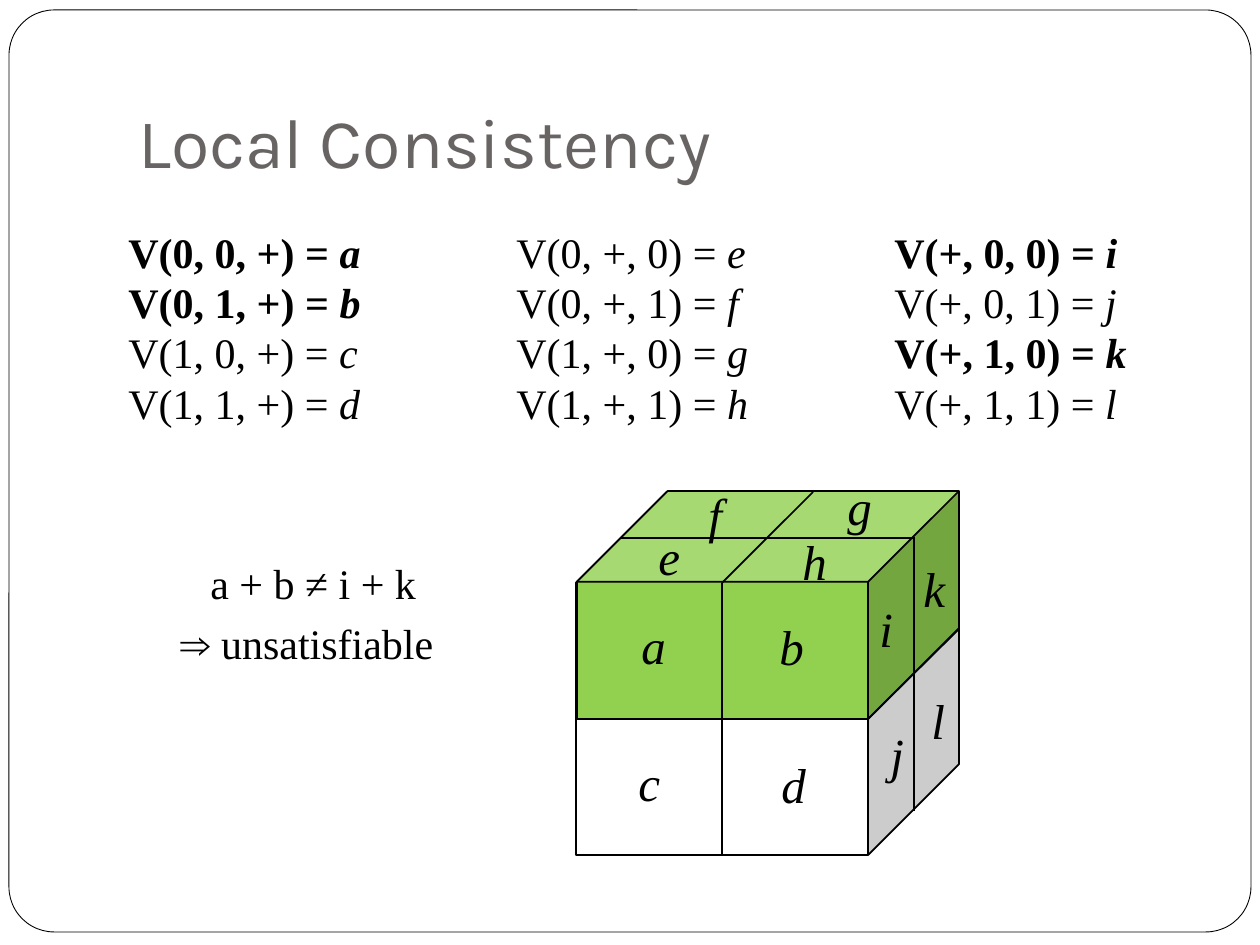
from pptx import Presentation
from pptx.dml.color import RGBColor
from pptx.enum.shapes import MSO_CONNECTOR, MSO_SHAPE
from pptx.enum.text import MSO_ANCHOR
from pptx.oxml.ns import qn
from pptx.util import Pt
from lxml.etree import SubElement

PX = 914400 / 126
COLORS = {"ink": "000000", "title": "696464", "paper": "FFFFFF", "green": "92D050"}
SERIF = "Times New Roman"

# Column left, width, then (term, letter) rows
COLUMNS = [
    (116, 262, [("0, 0, +", "a"), ("0, 1, +", "b"), ("1, 0, +", "c"), ("1, 1, +", "d")]),
    (504, 273, [("0, +, 0", "e"), ("0, +, 1", "f"), ("1, +, 0", "g"), ("1, +, 1", "h")]),
    (882, 273, [("+, 0, 0", "i"), ("+, 0, 1", "j"), ("+, 1, 0", "k"), ("+, 1, 1", "l")]),
]
BOLD = "abik"
CLAIMS = [("a + b ≠ i + k", 198, 551, 260), ("⇒ unsatisfiable", 168, 611, 339)]
LETTERS = {
    "a": (629, 609), "b": (767, 610), "c": (626, 746), "d": (769, 748),
    "e": (646, 520), "f": (696, 478), "g": (835, 470), "h": (790, 525),
    "i": (867, 592), "j": (878, 718), "k": (911, 552), "l": (919, 684),
}
# Shape, box, fill, line width, adjustment
FRAME = (MSO_SHAPE.ROUNDED_RECTANGLE, (9, 10, 1242, 922), "paper", 0.5, 0.049)
CUBE = (MSO_SHAPE.CUBE, (576, 492, 383, 363), "paper", 1, 0.25)
TOP = (MSO_SHAPE.CUBE, (577, 491, 382, 228), "green", 1, 0.398)
SEAMS = [
    (576, 719, 868, 719), (868, 719, 959, 629),
    (722, 855, 722, 583), (914, 811, 914, 537),
    (722, 583, 813, 492), (914, 538, 621, 538),
]


def emu(*nums):
    return [round(n * PX) for n in nums]


def color(name):
    return RGBColor.from_string(COLORS[name])


def solid(kind, box, fill, width, adj):
    shape = slide.shapes.add_shape(kind, *emu(*box))
    shape.shadow.inherit = False
    shape.adjustments[0] = adj
    shape.fill.solid()
    shape.fill.fore_color.rgb = color(fill)
    shape.line.color.rgb = color("ink")
    shape.line.width = Pt(width)


def seam(*ends):
    line = slide.shapes.add_connector(MSO_CONNECTOR.STRAIGHT, *emu(*ends))
    line.line.color.rgb = color("ink")
    line.line.width = Pt(1)
    SubElement(line._element.spPr, qn("a:effectLst"))


def frame(*box):
    text = slide.shapes.add_textbox(*emu(*box)).text_frame
    text.word_wrap = True
    return text


def style(run, size, font=SERIF, ink="ink", bold=False, italic=False):
    run.font.size = Pt(size)
    run.font.name = font
    run.font.color.rgb = color(ink)
    run.font.bold = bold
    run.font.italic = italic


def label(words, box, size, **look):
    text = frame(*box)
    text.text = words
    style(text.paragraphs[0].runs[0], size, **look)
    return text


def column(left, width, rows):
    text = frame(left, 220, width, 217)
    text.text = "\n".join(f"V({term}) = " for term, _ in rows)
    for para, (_, letter) in zip(text.paragraphs, rows):
        para.add_run().text = letter
        for run, italic in zip(para.runs, (False, True)):
            style(run, 24, bold=letter in BOLD, italic=italic)


deck = Presentation()
deck.slide_width, deck.slide_height = emu(1260, 945)
slide = deck.slides.add_slide(deck.slide_layouts[6])

solid(*FRAME)
title = label("Local Consistency", (126, 38, 1071, 157), 40, font="Karla", ink="title")
title.vertical_anchor = MSO_ANCHOR.BOTTOM
title.margin_bottom = emu(13)[0]

for col in COLUMNS:
    column(*col)
for words, left, top, width in CLAIMS:
    label(words, (left, top, width, 63), 24)

solid(*CUBE)
solid(*TOP)
for ends in SEAMS:
    seam(*ends)
for letter, spot in LETTERS.items():
    label(letter, (*spot, 50, 72), 28, italic=True)

deck.save("out.pptx")
